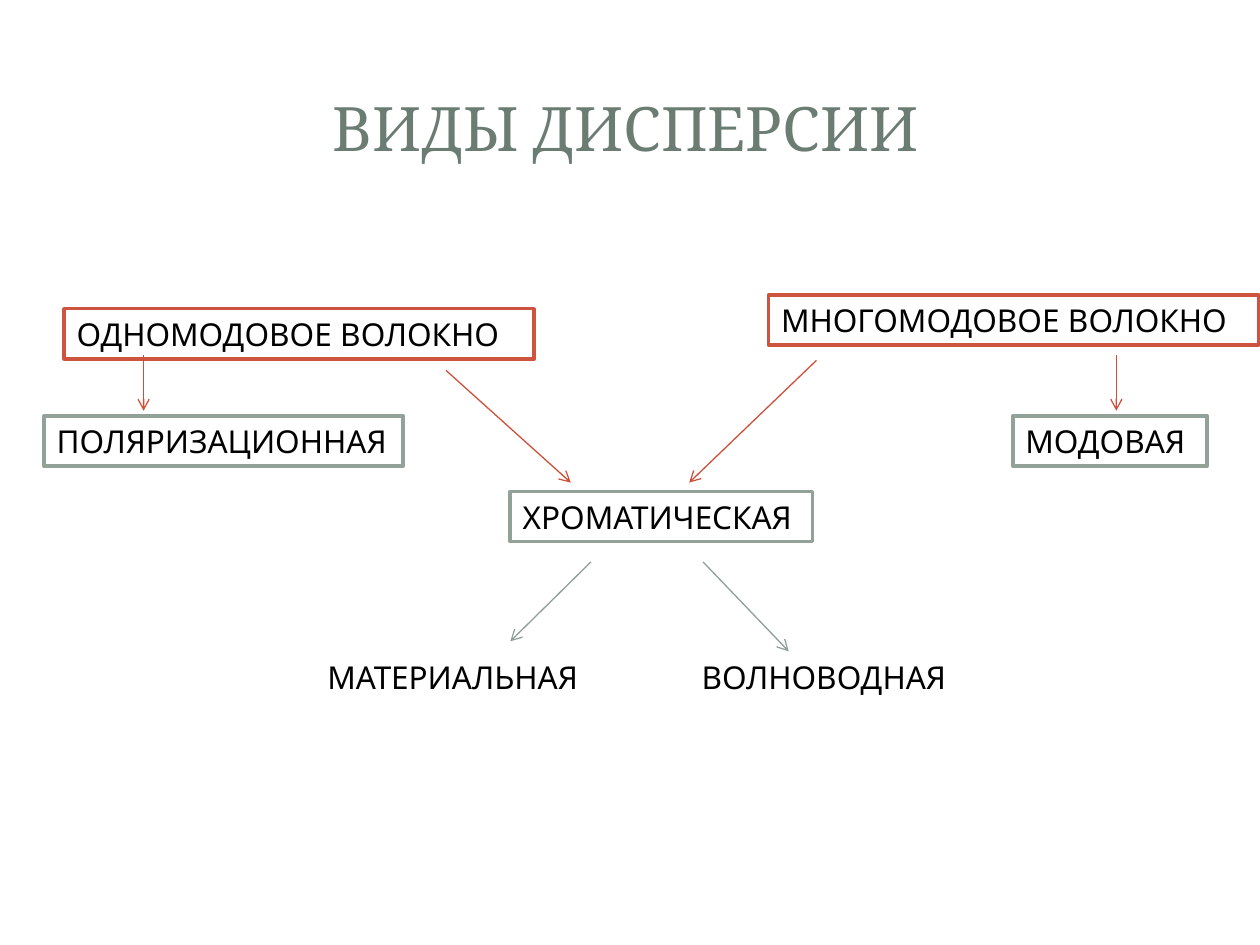
from lxml.etree import SubElement
from pptx import Presentation
from pptx.dml.color import RGBColor
from pptx.enum.shapes import MSO_CONNECTOR, MSO_SHAPE
from pptx.enum.text import MSO_ANCHOR, PP_ALIGN
from pptx.oxml.ns import qn
from pptx.util import Inches, Pt

WHITE = RGBColor(0xFF, 0xFF, 0xFF)
BLACK = RGBColor(0, 0, 0)
TITLE_GREEN = RGBColor(0x6B, 0x7D, 0x72)
BOX_GREEN = RGBColor(0x93, 0xA2, 0x99)
ARROW_GREEN = RGBColor(0x8F, 0x9F, 0x96)
BOX_RED = RGBColor(0xCF, 0x54, 0x3F)
ARROW_RED = RGBColor(0xCE, 0x50, 0x3A)
LABEL_HEIGHT = Inches(0.4)

# text, left, top, width, outline
BOXES = [
    ("МОДОВАЯ", 8.04, 3.3, 1.54, BOX_GREEN),
    ("ХРОМАТИЧЕСКАЯ", 4.05, 3.9, 2.4, BOX_GREEN),
    ("ПОЛЯРИЗАЦИОННАЯ", 0.35, 3.3, 2.85, BOX_GREEN),
    ("ОДНОМОДОВОЕ ВОЛОКНО", 0.51, 2.45, 3.73, BOX_RED),
    ("МНОГОМОДОВОЕ ВОЛОКНО", 6.1, 2.34, 3.89, BOX_RED),
]
# text, left, top, width
PLAIN_LABELS = [
    ("МАТЕРИАЛЬНАЯ", 2.5, 5.17, 2.22),
    ("ВОЛНОВОДНАЯ", 5.47, 5.17, 2.2),
]
# start, end, colour
ARROWS = [
    ((4.69, 4.46), (4.05, 5.09), ARROW_GREEN),
    ((5.58, 4.46), (6.26, 5.17), ARROW_GREEN),
    ((6.48, 2.86), (5.47, 3.83), ARROW_RED),
    ((3.54, 2.94), (4.53, 3.83), ARROW_RED),
    ((8.86, 2.82), (8.86, 3.26), ARROW_RED),
    ((1.14, 2.82), (1.14, 3.26), ARROW_RED),
]


def format_title(title):
    title.left, title.top = Inches(0.45), Inches(0.44)
    title.width, title.height = Inches(9.03), Inches(1.14)
    frame = title.text_frame
    frame.text = "ВИДЫ ДИСПЕРСИИ"
    frame.vertical_anchor = MSO_ANCHOR.MIDDLE
    heading = frame.paragraphs[0]
    heading.alignment = PP_ALIGN.CENTER
    heading.font.name = "Cambria"
    heading.font.size = Pt(35)
    heading.font.color.rgb = TITLE_GREEN


def write_label(frame, text):
    frame.text = text
    frame.word_wrap = True
    frame.vertical_anchor = MSO_ANCHOR.TOP
    label = frame.paragraphs[0]
    label.alignment = PP_ALIGN.LEFT
    label.font.name = "Quicksand"
    label.font.size = Pt(18)
    label.font.color.rgb = BLACK


def add_box(slide, text, left, top, width, outline):
    box = slide.shapes.add_shape(
        MSO_SHAPE.RECTANGLE, Inches(left), Inches(top), Inches(width), LABEL_HEIGHT)
    box.shadow.inherit = False
    box.fill.solid()
    box.fill.fore_color.rgb = WHITE
    box.line.color.rgb = outline
    box.line.width = Pt(2)
    write_label(box.text_frame, text)


def add_plain_label(slide, text, left, top, width):
    label = slide.shapes.add_textbox(
        Inches(left), Inches(top), Inches(width), LABEL_HEIGHT)
    write_label(label.text_frame, text)


def add_arrow(slide, start, end, colour):
    arrow = slide.shapes.add_connector(
        MSO_CONNECTOR.STRAIGHT, *map(Inches, start + end))
    arrow.line.color.rgb = colour
    arrow.line.width = Pt(0.75)
    SubElement(arrow.line._get_or_add_ln(), qn("a:tailEnd"), type="arrow")
    SubElement(arrow._element.spPr, qn("a:effectLst"))


def main():
    presentation = Presentation()
    presentation.slide_width, presentation.slide_height = Inches(10), Inches(7.5)
    slide = presentation.slides.add_slide(presentation.slide_layouts[5])
    format_title(slide.shapes.title)
    for box in BOXES:
        add_box(slide, *box)
    for label in PLAIN_LABELS:
        add_plain_label(slide, *label)
    for arrow in ARROWS:
        add_arrow(slide, *arrow)
    presentation.save("out.pptx")


if __name__ == "__main__":
    main()
